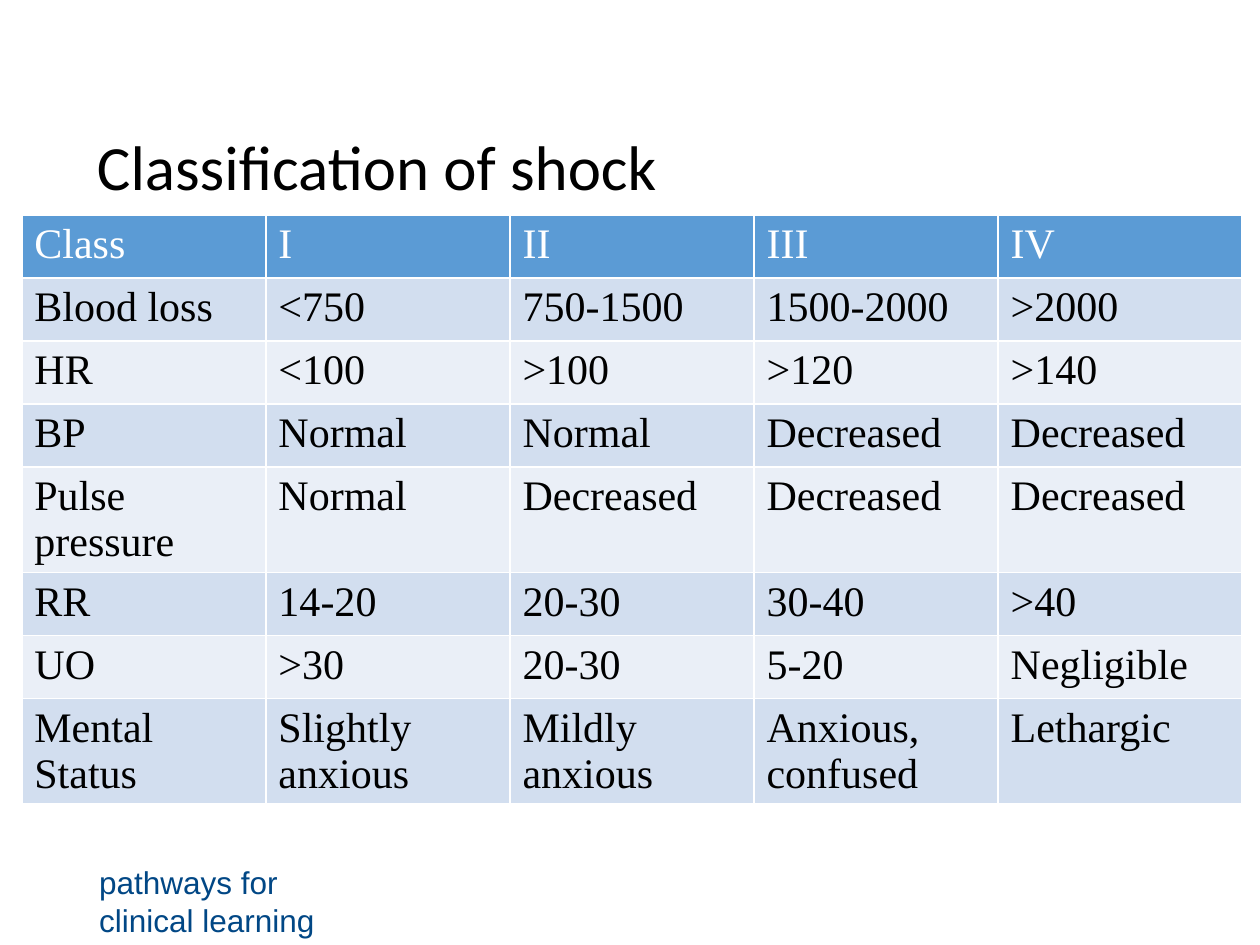
"""Build a slide with a table of the four classes of shock."""
from pptx import Presentation
from pptx.dml.color import RGBColor
from pptx.enum.text import MSO_ANCHOR, PP_ALIGN
from pptx.util import Cm, Pt

MIDDLE = MSO_ANCHOR.MIDDLE
LEFT = PP_ALIGN.LEFT
COLORS = {"text": "000000", "header": "5B9BD5", "header_text": "FFFFFF",
          "odd": "D2DEEF", "even": "EAEFF7", "footer": "014785"}
ROWS = [
    ["Class", "I", "II", "III", "IV"],
    ["Blood loss", "<750", "750-1500", "1500-2000", ">2000"],
    ["HR", "<100", ">100", ">120", ">140"],
    ["BP", "Normal", "Normal", "Decreased", "Decreased"],
    ["Pulse pressure", "Normal", "Decreased", "Decreased", "Decreased"],
    ["RR", "14-20", "20-30", "30-40", ">40"],
    ["UO", ">30", "20-30", "5-20", "Negligible"],
    ["Mental Status", "Slightly anxious", "Mildly anxious",
     "Anxious, confused", "Lethargic"],
]


def add_text(tf, text, font, size, color):
    p = tf.paragraphs[0]
    p.alignment = LEFT
    r = p.add_run()
    r.text = text
    r.font.name = font
    r.font.size = Pt(size)
    r.font.bold = False
    r.font.color.rgb = RGBColor.from_string(COLORS[color])
    return p


prs = Presentation()
prs.slide_width, prs.slide_height = Cm(25.4), Cm(19.05)
s = prs.slides.add_slide(prs.slide_layouts[5])

title = s.shapes.title
title.left, title.top, title.width, title.height = Cm(1.7), Cm(2.13), Cm(22.2), Cm(2.6)
title.text_frame.vertical_anchor = MIDDLE
p = add_text(title.text_frame, "Classification of shock", "Calibri", 36, "text")
p.line_spacing = 0.9

col_width, row_height = Cm(4.92), Cm(1.27)
table = s.shapes.add_table(len(ROWS), len(ROWS[0]), Cm(0.44), Cm(4.33),
                           col_width * len(ROWS[0]), row_height * len(ROWS)).table
for i, row in enumerate(ROWS):
    fill = "header" if i == 0 else "odd" if i % 2 else "even"
    color = "header_text" if i == 0 else "text"
    for j, text in enumerate(row):
        cell = table.cell(i, j)
        cell.fill.solid()
        cell.fill.fore_color.rgb = RGBColor.from_string(COLORS[fill])
        add_text(cell.text_frame, text, "Times New Roman", 24, color)

footer = s.shapes.add_textbox(Cm(1.75), Cm(17.65), Cm(5.72), Cm(1.02))
tf = footer.text_frame
tf.word_wrap = True
tf.vertical_anchor = MIDDLE
add_text(tf, "pathways for clinical learning", "Arial", 18, "footer")

prs.save("out.pptx")
